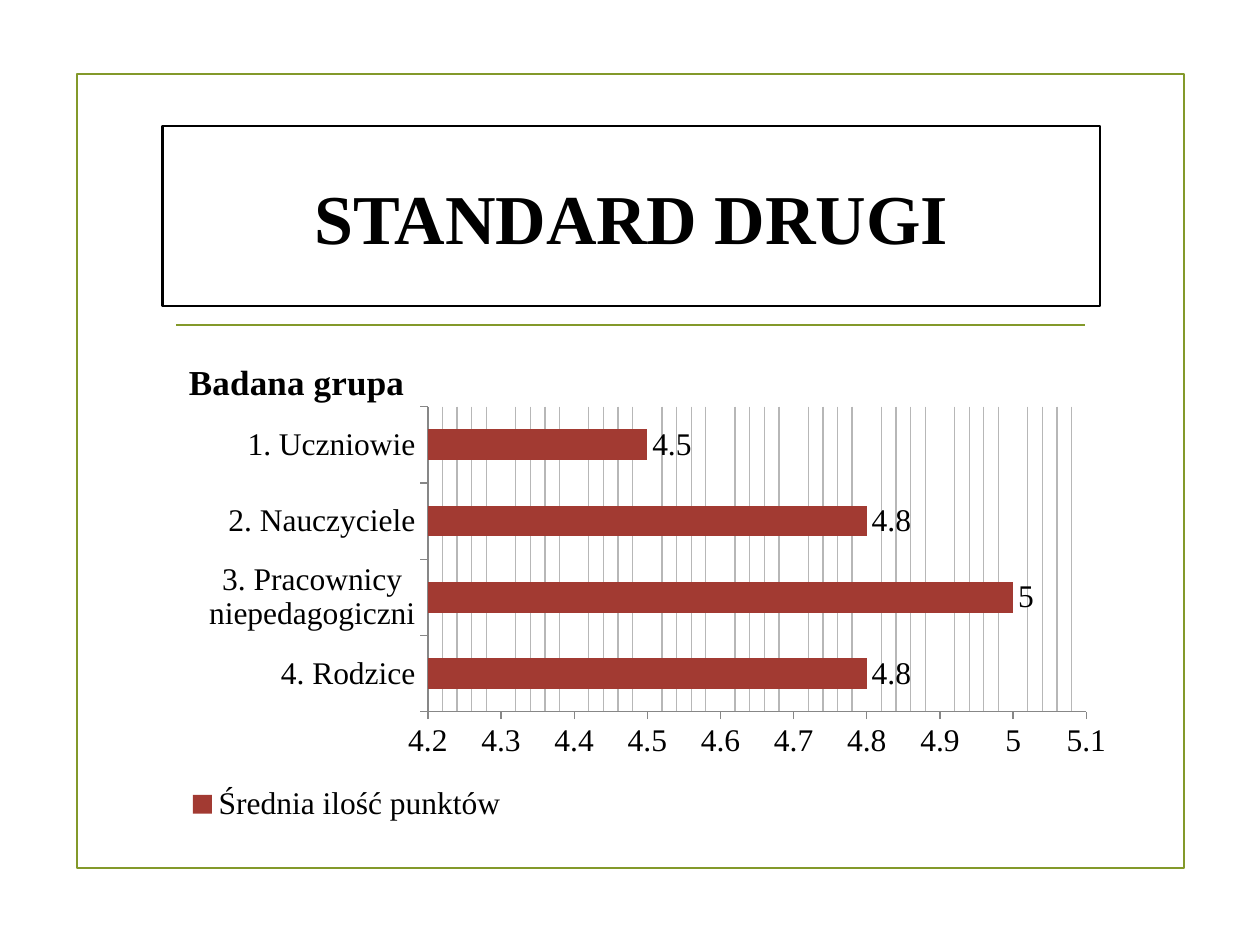
import pptx
import pptx.chart.data
import pptx.dml.color
import pptx.enum.chart
import pptx.enum.shapes
import pptx.enum.text
import pptx.oxml
import pptx.oxml.ns
import pptx.util

Pt = pptx.util.Pt

TITLE = "STANDARD DRUGI"
CHART_TITLE = "Badana grupa"
SERIES_NAME = "Średnia ilość punktów"
SCORES = [  # from the bottom bar up
    ("4. Rodzice", 4.8),
    ("3. Pracownicy niepedagogiczni", 5),
    ("2. Nauczyciele", 4.8),
    ("1. Uczniowie", 4.5),
]

FONT = "Times New Roman"
COLORS = {"paper": "FFFFFF", "ink": "000000", "frame": "83992A",
          "bar": "A23A32", "axis": "878787", "grid": "B7B7B7"}

# left, top, width, height
FRAME_BOX = (43.9, 42.5, 632.9, 453.6)
TITLE_BOX = (92.9, 72, 535.7, 103)
CHART_BOX = (87.8, 196.6, 550.1, 283.7)
RULE_LEFT, RULE_RIGHT, RULE_TOP = 100.8, 619.9, 185.8


def color(name):
    return pptx.dml.color.RGBColor.from_string(COLORS[name])


def style_line(line, name, width):
    line.color.rgb = color(name)
    line.width = Pt(width)


def style_font(font, size, bold=False):
    font.name = FONT
    font.size = Pt(size)
    font.bold = bold
    font.color.rgb = color("ink")


def place_in_chart(element, index, inner=False, **fractions):
    """Give a chart part a manual layout, in fractions of the chart's size."""
    qn = pptx.oxml.ns.qn
    for layout in element.findall(qn("c:layout")):
        element.remove(layout)
    target = '<c:layoutTarget val="inner"/>' if inner else ""
    modes = "".join(f'<c:{key}Mode val="edge"/>' for key in "xy")
    values = "".join(f'<c:{key} val="{value}"/>' for key, value in fractions.items())
    element.insert(index, pptx.oxml.parse_xml(
        f'<c:layout {pptx.oxml.ns.nsdecls("c")}><c:manualLayout>'
        f"{target}{modes}{values}</c:manualLayout></c:layout>"))


def style_minor_gridlines(axis, name, width):
    gridlines = axis._element.find(pptx.oxml.ns.qn("c:minorGridlines"))
    gridlines.append(pptx.oxml.parse_xml(
        f'<c:spPr {pptx.oxml.ns.nsdecls("c", "a")}><a:ln w="{Pt(width)}">'
        f'<a:solidFill><a:srgbClr val="{COLORS[name]}"/></a:solidFill>'
        "</a:ln></c:spPr>"))


def add_frame(slide):
    frame = slide.shapes.add_shape(
        pptx.enum.shapes.MSO_SHAPE.RECTANGLE, *map(Pt, FRAME_BOX))
    frame.shadow.inherit = False
    frame.fill.background()
    style_line(frame.line, "frame", 1.25)

    rule = slide.shapes.add_connector(
        pptx.enum.shapes.MSO_CONNECTOR.STRAIGHT,
        Pt(RULE_LEFT), Pt(RULE_TOP), Pt(RULE_RIGHT), Pt(RULE_TOP))
    style_line(rule.line, "frame", 1.25)
    rule._element.spPr.append(
        pptx.oxml.parse_xml(f'<a:effectLst {pptx.oxml.ns.nsdecls("a")}/>'))


def fill_title(title):
    title.left, title.top, title.width, title.height = map(Pt, TITLE_BOX)
    title.fill.solid()
    title.fill.fore_color.rgb = color("paper")
    style_line(title.line, "ink", 1.25)
    title.text_frame.text = TITLE
    title.text_frame.vertical_anchor = pptx.enum.text.MSO_ANCHOR.MIDDLE
    heading = title.text_frame.paragraphs[0]
    heading.alignment = pptx.enum.text.PP_ALIGN.CENTER
    style_font(heading.font, 40, bold=True)


def add_score_chart(slide):
    enums = pptx.enum.chart
    data = pptx.chart.data.CategoryChartData()
    data.categories = [group for group, _ in SCORES]
    data.add_series(SERIES_NAME, [score for _, score in SCORES])
    chart = slide.shapes.add_chart(
        enums.XL_CHART_TYPE.BAR_CLUSTERED, *map(Pt, CHART_BOX), data).chart
    style_font(chart.font, 18)

    chart.has_title = True
    chart.chart_title.text_frame.text = CHART_TITLE
    style_font(chart.chart_title.text_frame.paragraphs[0].font, 20, bold=True)

    chart.has_legend = True
    chart.legend.position = enums.XL_LEGEND_POSITION.RIGHT
    chart.legend.include_in_layout = False

    plot = chart.plots[0]
    plot.vary_by_categories = False
    plot.gap_width = 150
    bars = plot.series[0].format.fill
    bars.solid()
    bars.fore_color.rgb = color("bar")
    plot.has_data_labels = True
    plot.data_labels.show_value = True
    plot.data_labels.position = enums.XL_LABEL_POSITION.OUTSIDE_END
    style_font(plot.data_labels.font, 18)

    for axis in (chart.category_axis, chart.value_axis):
        axis.major_tick_mark = enums.XL_TICK_MARK.OUTSIDE
        axis.minor_tick_mark = enums.XL_TICK_MARK.NONE
        style_line(axis.format.line, "axis", 0.75)
    scale = chart.value_axis
    scale.minimum_scale, scale.maximum_scale = 4.2, 5.1
    scale.major_unit, scale.minor_unit = 0.1, 0.02
    scale.has_major_gridlines = False
    scale.has_minor_gridlines = True
    style_minor_gridlines(scale, "grid", 0.75)

    place_in_chart(chart.chart_title._element, 1, x=0.03, y=0.02)
    place_in_chart(chart.legend._element, 1, x=0.03, y=0.88)
    plot_area = chart._chartSpace.chart.plotArea
    place_in_chart(plot_area, 0, inner=True, x=0.285, y=0.126, w=0.684, h=0.615)


def main():
    deck = pptx.Presentation()
    deck.slide_width, deck.slide_height = Pt(720), Pt(540)
    slide = deck.slides.add_slide(deck.slide_layouts.get_by_name("Title Only"))
    add_frame(slide)
    fill_title(slide.shapes.title)
    add_score_chart(slide)
    deck.save("out.pptx")


if __name__ == "__main__":
    main()
